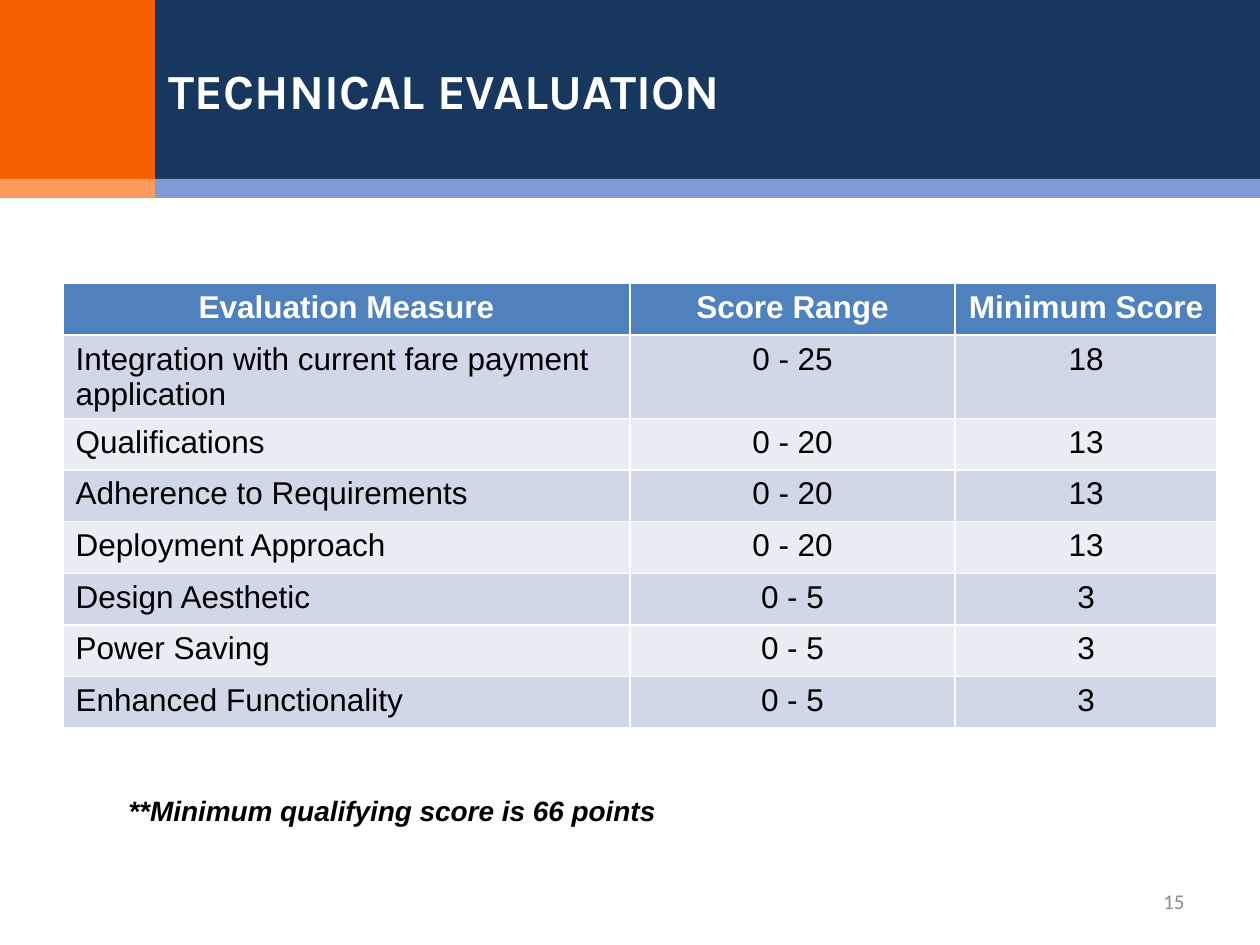
import pptx
import pptx.dml.color
import pptx.enum.shapes
import pptx.enum.text
import pptx.util

Inches = pptx.util.Inches
ALIGN = pptx.enum.text.PP_ALIGN
MIDDLE = pptx.enum.text.MSO_ANCHOR.MIDDLE


def rgb(value):
    """Turn a hex string into a colour."""
    return pptx.dml.color.RGBColor.from_string(value)


class Deck:
    """Hold the style and the current slide."""

    FONT = "Arial"
    WHITE, BLACK = "FFFFFF", "000000"
    HEADER, BANDS = "4F81BD", ("D0D8E8", "E9EDF4")

    def __init__(self, prs):
        """Start a title-only slide."""
        self.s = prs.slides.add_slide(prs.slide_layouts[5])

    def style(self, p, size, color, font=FONT, bold=False, italic=False, align=ALIGN.LEFT):
        """Format one paragraph."""
        p.alignment = align
        f = p.font
        f.name, f.size, f.bold, f.italic = font, pptx.util.Pt(size), bold, italic
        f.color.rgb = rgb(color)

    def bar(self, x, y, w, h, color):
        """Draw a plain filled rectangle."""
        sp = self.s.shapes.add_shape(
            pptx.enum.shapes.MSO_SHAPE.RECTANGLE, Inches(x), Inches(y), Inches(w), Inches(h))
        sp.shadow.inherit = False
        sp.fill.solid()
        sp.fill.fore_color.rgb = rgb(color)
        sp.line.fill.background()

    def title(self, text, x, y, w, h):
        """Place the title in front of the banner."""
        sp = self.s.shapes.title
        self.s.shapes._spTree.append(sp._element)
        sp.left, sp.top, sp.width, sp.height = Inches(x), Inches(y), Inches(w), Inches(h)
        tf = sp.text_frame
        tf.text = text
        tf.vertical_anchor = MIDDLE
        self.style(tf.paragraphs[0], 28, self.WHITE, "Karla", True, align=ALIGN.JUSTIFY)

    def text(self, text, x, y, w, h, size, color, anchor=None, **style):
        """Add a one-paragraph text box."""
        tf = self.s.shapes.add_textbox(Inches(x), Inches(y), Inches(w), Inches(h)).text_frame
        tf.word_wrap = True
        tf.vertical_anchor = anchor
        tf.text = text
        self.style(tf.paragraphs[0], size, color, **style)

    def table(self, rows, x, y, widths, row_height):
        """Add a banded table with a header row."""
        table = self.s.shapes.add_table(
            len(rows), len(widths), Inches(x), Inches(y),
            Inches(sum(widths)), Inches(row_height * len(rows))).table
        for column, width in zip(table.columns, widths):
            column.width = Inches(width)
        for i, row in enumerate(rows):
            header = i == 0
            for j, value in enumerate(row):
                cell = table.cell(i, j)
                cell.text = value
                cell.fill.solid()
                cell.fill.fore_color.rgb = rgb(self.HEADER if header else self.BANDS[(i - 1) % 2])
                self.style(cell.text_frame.paragraphs[0], 18,
                           self.WHITE if header else self.BLACK, bold=header,
                           align=ALIGN.CENTER if header or j else ALIGN.LEFT)


def main():
    """Build the technical evaluation slide."""
    prs = pptx.Presentation()
    prs.slide_width, prs.slide_height = Inches(10), Inches(7.5)
    deck = Deck(prs)
    deck.bar(1.23, 0, 8.77, 1.43, "17375E")
    deck.bar(0, 0, 1.23, 1.43, "F76003")
    deck.bar(1.23, 1.42, 8.77, 0.15, "7F9BD3")
    deck.bar(0, 1.42, 1.23, 0.15, "FD9A5D")
    deck.text("15", 7.17, 6.95, 2.33, 0.4, 12, "8C8C8C", MIDDLE,
              font="Calibri", align=ALIGN.RIGHT)
    deck.title("TECHNICAL EVALUATION", 1.24, 0, 8.76, 1.42)
    deck.table([
        ("Evaluation Measure", "Score Range", "Minimum Score"),
        ("Integration with current fare payment application", "0 - 25", "18"),
        ("Qualifications", "0 - 20", "13"),
        ("Adherence to Requirements", "0 - 20", "13"),
        ("Deployment Approach", "0 - 20", "13"),
        ("Design Aesthetic", "0 - 5", "3"),
        ("Power Saving", "0 - 5", "3"),
        ("Enhanced Functionality", "0 - 5", "3"),
    ], 0.5, 2.25, (4.5, 2.58, 2.08), 0.41)
    deck.text("**Minimum qualifying score is 66 points", 0.92, 6.25, 4.45, 0.37,
              16, deck.BLACK, bold=True, italic=True)
    prs.save("out.pptx")


if __name__ == "__main__":
    main()
